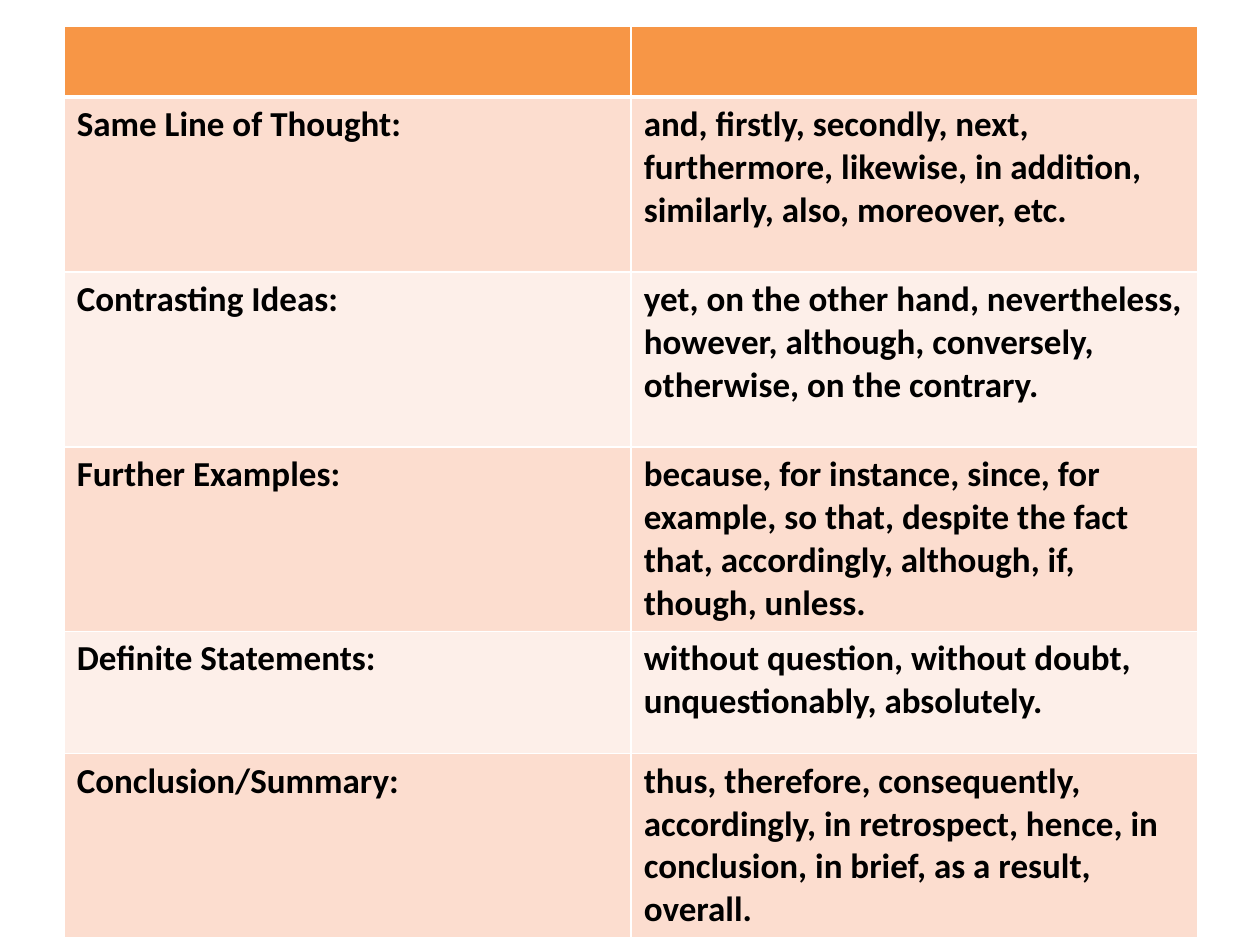
import pptx
import pptx.util
import pptx.dml.color
import pptx.oxml.ns
import lxml.etree

Inches = pptx.util.Inches
Pt = pptx.util.Pt
RGB = pptx.dml.color.RGBColor

ORANGE = RGB(0xF7, 0x96, 0x46)
PEACH = RGB(0xFC, 0xDD, 0xCF)
CREAM = RGB(0xFD, 0xEF, 0xE9)
BLACK = RGB(0, 0, 0)
WHITE = RGB(0xFF, 0xFF, 0xFF)

ROWS = [
    ("", "", 0.56),
    ("Same Line of Thought:",
     "and, firstly, secondly, next, furthermore, likewise, in addition, "
     "similarly, also, moreover, etc.", 1.39),
    ("Contrasting Ideas:",
     "yet, on the other hand, nevertheless, however, although, conversely, "
     "otherwise, on the contrary.", 1.39),
    ("Further Examples:",
     "because, for instance, since, for example, so that, despite the fact "
     "that, accordingly, although, if, though, unless.", 1.39),
    ("Definite Statements:",
     "without question, without doubt, unquestionably, absolutely.", 0.97),
    ("Conclusion/Summary:",
     "thus, therefore, consequently, accordingly, in retrospect, hence, in "
     "conclusion, in brief, as a result, overall.", 1.39),
]


def put_text(frame, text, size=20, bold=True, color=BLACK, font="Calibri"):
    run = frame.paragraphs[0].add_run()
    run.text = text
    run.font.size = Pt(size)
    run.font.bold = bold
    run.font.color.rgb = color
    run.font.name = font


def add_edge(cell, side, width):
    qn = pptx.oxml.ns.qn
    props = cell._tc.get_or_add_tcPr()
    line = lxml.etree.SubElement(props, qn("a:ln" + side), w=str(Pt(width)))
    fill = lxml.etree.SubElement(line, qn("a:solidFill"))
    lxml.etree.SubElement(fill, qn("a:srgbClr"), val=str(WHITE))


def style_cell(cell, color, top, base):
    for side, width in (("L", 1), ("R", 1), ("T", top), ("B", base)):
        add_edge(cell, side, width)
    cell.fill.solid()
    cell.fill.fore_color.rgb = color


def add_grid(slide):
    high = sum(row[2] for row in ROWS)
    frame = slide.shapes.add_table(
        len(ROWS), 2, Inches(0.51), Inches(0.21), Inches(9), Inches(high))
    table = frame.table
    for num, (label, words, height) in enumerate(ROWS):
        table.rows[num].height = Inches(height)
        color = ORANGE if num == 0 else PEACH if num % 2 else CREAM
        for col, text in enumerate((label, words)):
            cell = table.cell(num, col)
            style_cell(cell, color, 3 if num == 1 else 1, 3 if num == 0 else 1)
            if text:
                put_text(cell.text_frame, text)


def main():
    deck = pptx.Presentation()
    deck.slide_width = Inches(10)
    deck.slide_height = Inches(7.5)
    add_grid(deck.slides.add_slide(deck.slide_layouts[6]))
    deck.save("out.pptx")


if __name__ == "__main__":
    main()
